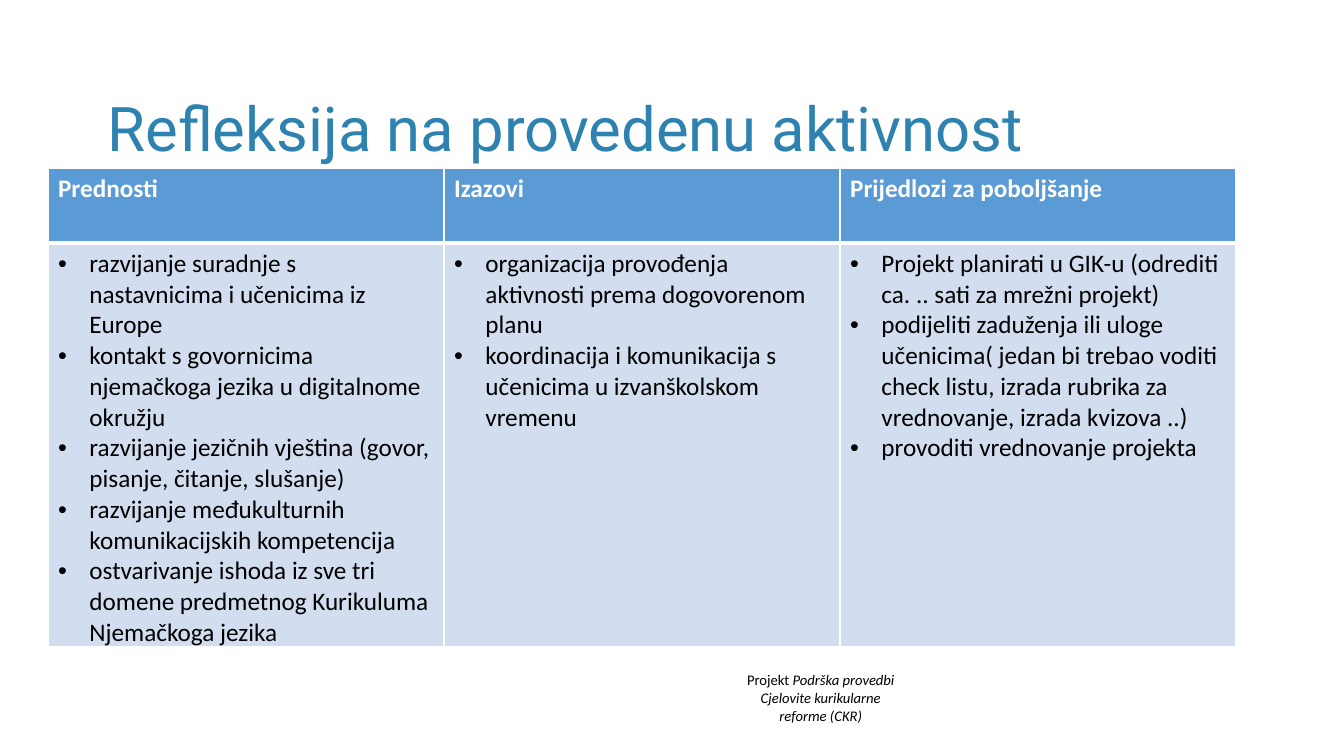
from lxml.etree import SubElement
from pptx import Presentation
from pptx.dml.color import RGBColor
from pptx.enum.text import MSO_ANCHOR, PP_ALIGN
from pptx.oxml.ns import qn
from pptx.util import Cm, Pt

HEADER_FILL, BODY_FILL = "5B9BD5", "D2DEEF"
WHITE, BLACK, TITLE_BLUE = "FFFFFF", "000000", "2E82AF"
INDENT = Cm(0.79)

COLUMNS = [
    ("Prednosti", [
        "razvijanje suradnje s nastavnicima i učenicima iz Europe",
        "kontakt s govornicima njemačkoga jezika u digitalnome okružju",
        "razvijanje jezičnih vještina (govor, pisanje, čitanje, slušanje)",
        "razvijanje međukulturnih komunikacijskih kompetencija",
        "ostvarivanje ishoda iz sve tri domene predmetnog Kurikuluma Njemačkoga jezika",
    ]),
    ("Izazovi", [
        "organizacija provođenja aktivnosti prema dogovorenom planu",
        "koordinacija i komunikacija s učenicima u izvanškolskom vremenu",
    ]),
    ("Prijedlozi za poboljšanje", [
        "Projekt planirati u GIK-u (odrediti ca. .. sati za mrežni projekt)",
        "podijeliti zaduženja ili uloge učenicima( jedan bi trebao voditi check listu, "
        "izrada rubrika za vrednovanje, izrada kvizova ..)",
        "provoditi vrednovanje projekta",
    ]),
]


def set_font(r, size, color, name="Calibri", bold=False, italic=False):
    r.font.size = Pt(size)
    r.font.name = name
    r.font.bold = bold
    r.font.italic = italic
    r.font.color.rgb = RGBColor.from_string(color)


def style_cell(cell, fill, top, bottom):
    """Give the cell white borders and a solid fill; top and bottom are line widths in points."""
    tcPr = cell._tc.get_or_add_tcPr()
    for side, width in (("L", 1), ("R", 1), ("T", top), ("B", bottom)):
        ln = SubElement(tcPr, qn(f"a:ln{side}"), w=str(Pt(width)))
        SubElement(SubElement(ln, qn("a:solidFill")), qn("a:srgbClr"), val=WHITE)
    cell.fill.solid()
    cell.fill.fore_color.rgb = RGBColor.from_string(fill)


prs = Presentation()
prs.slide_width, prs.slide_height = Cm(33.87), Cm(19.05)
s = prs.slides.add_slide(prs.slide_layouts[6])

# Footer
tf = s.shapes.add_textbox(Cm(17.75), Cm(16.79), Cm(5.87), Cm(1.6)).text_frame
tf.word_wrap = True
p = tf.paragraphs[0]
p.text = "Projekt "
p.add_run().text = "Podrška provedbi"
p = tf.add_paragraph()
p.text = "Cjelovite kurikularne\vreforme (CKR)"
for p in tf.paragraphs:
    p.alignment = PP_ALIGN.CENTER
    for r in p.runs:
        set_font(r, 10.5, BLACK, italic=r.text != "Projekt ")

# Title
tf = s.shapes.add_textbox(Cm(2.46), Cm(1.47), Cm(29.21), Cm(3.68)).text_frame
tf.word_wrap = True
tf.vertical_anchor = MSO_ANCHOR.MIDDLE
p = tf.paragraphs[0]
p.text = "Refleksija na provedenu aktivnost"
p.line_spacing = 0.9
set_font(p.runs[0], 44, TITLE_BLUE, "Roboto")

# Reflection table
table = s.shapes.add_table(2, len(COLUMNS), Cm(1.21), Cm(4.25), Cm(29.94), Cm(12.04)).table
table.horz_banding = False
table.rows[0].height, table.rows[1].height = Cm(1.88), Cm(10.16)

for col, (heading, points) in enumerate(COLUMNS):
    table.columns[col].width = Cm(9.98)

    head = table.cell(0, col)
    style_cell(head, HEADER_FILL, 1, 3)
    head.text_frame.text = heading
    set_font(head.text_frame.paragraphs[0].runs[0], 18, WHITE, bold=True)

    body = table.cell(1, col)
    style_cell(body, BODY_FILL, 3, 1)
    body.text_frame.text = "\n".join(points)
    for p in body.text_frame.paragraphs:
        pPr = p._p.get_or_add_pPr()
        pPr.set("marL", str(INDENT))
        pPr.set("indent", str(-INDENT))
        SubElement(pPr, qn("a:buFont"), typeface="Arial")
        SubElement(pPr, qn("a:buChar"), char="•")
        set_font(p.runs[0], 18, BLACK)

prs.save("out.pptx")
